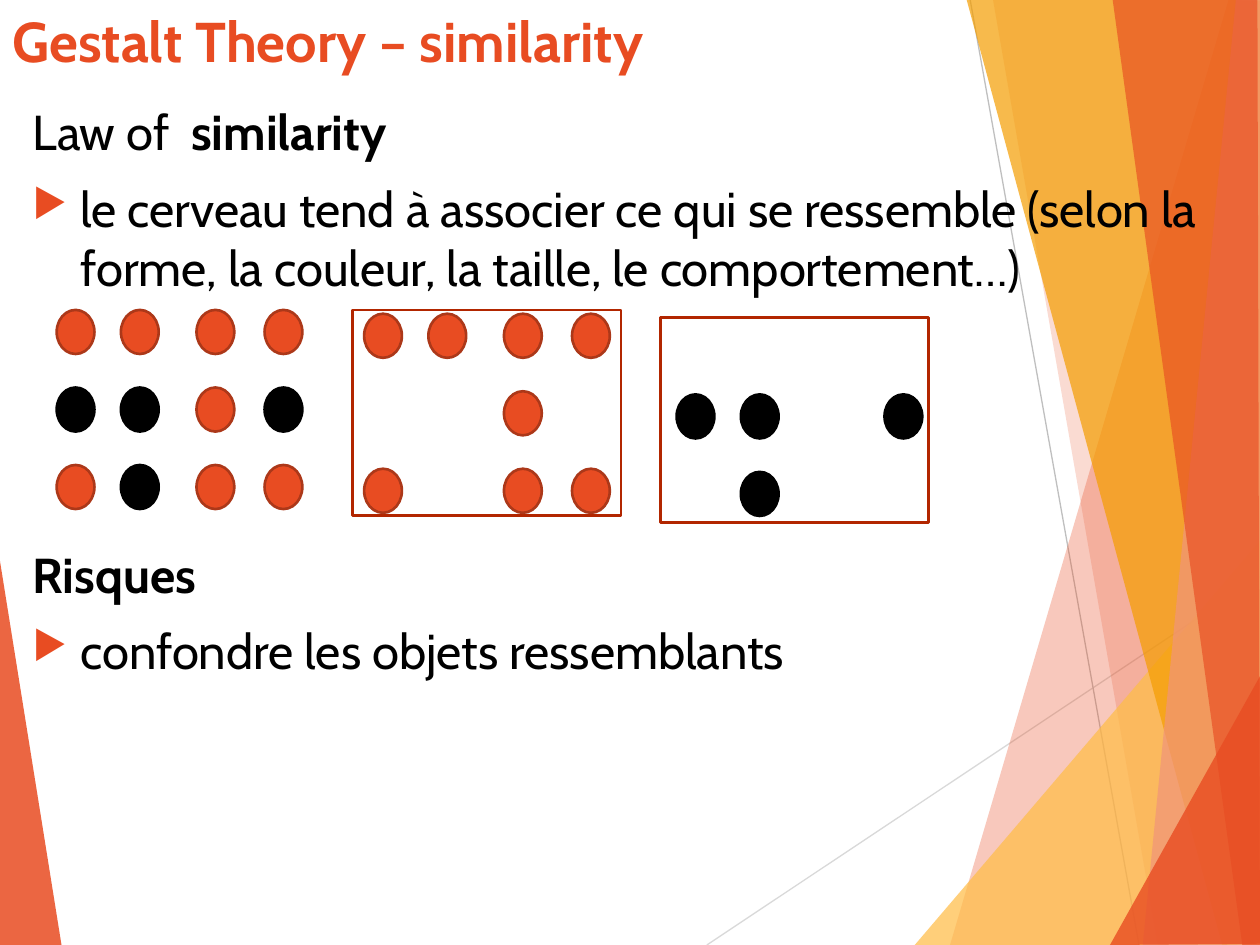
"""Build the Gestalt similarity slide."""
import dataclasses

import pptx
import pptx.dml.color
import pptx.enum.shapes
import pptx.enum.text
import pptx.oxml
import pptx.oxml.ns
import pptx.util
from lxml import etree

Inches = pptx.util.Inches
Pt = pptx.util.Pt
SHAPE = pptx.enum.shapes.MSO_SHAPE


@dataclasses.dataclass(frozen=True)
class Theme:
    """Colours, font and sizes of the slide."""
    font: str = "Cabin"
    title_size: int = 32
    body_size: int = 28
    line_width: float = 1.5
    hairline: float = 0.75
    accent: str = "E84C22"
    accent_edge: str = "AC3819"
    frame: str = "B22600"
    black: str = "000000"
    white: str = "FFFFFF"
    amber: str = "FFBD47"
    orange: str = "F49D00"
    salmon: str = "F1947A"
    light_grey: str = "D9D9D9"
    grey: str = "BFBFBF"


T = Theme()
COLUMNS = (0, 0.51, 1.11, 1.65)
ROW_STEP = 0.615

LEFT_FACET = (T.accent, 85, [(-0.01, 4.39), (0.49, 7.51), (-0.01, 7.5)])
RIGHT_FACETS = [
    (T.accent, 30, [(9.75, 0), (7.54, 7.5), (10.02, 7.51), (10.01, 0.01)]),
    (T.accent, 20, [(7.88, -0.01), (9.19, 7.5), (10.01, 7.5), (10.01, -0.01)]),
    (T.amber, 72, [(7.26, 7.5), (10, 4.29), (10.01, 7.5)]),
    (T.orange, 70, [(7.67, -0.01), (9.7, 7.5), (10.01, 7.49), (10.01, -0.01)]),
    (T.salmon, 70, [(9.81, -0.01), (9.07, 7.5), (10.01, 7.5), (10, -0.01)]),
    (T.accent, 65, [(8.83, -0.01), (9.86, 7.5), (10, 7.5), (9.98, -0.01)]),
    (T.accent, 80, [(8.81, 7.5), (10.01, 5.35), (10.01, 7.49)]),
]
DOT_GROUPS = [
    (0.45, 2.46, ("oooo", "xxox", "oxoo")),
    (2.89, 2.49, ("oooo", "  o ", "o oo")),
    (5.37, 2.515, ("    ", "xx x", " x  ")),
]
BODY = [
    (10, False, [("Law of  ", False), ("similarity", True)]),
    (10, True, [("le cerveau tend à associer ce qui se ressemble (selon la "
                 "forme, la couleur, la taille, le comportement…)", False)]),
    (142, False, [("Risques", True)]),
    (10, True, [("confondre les objets ressemblants", False)]),
]


def rgb(value):
    """Return a colour object for a hex value."""
    return pptx.dml.color.RGBColor.from_string(value)


def add_facet(s, color, alpha, points):
    """Add a translucent polygon."""
    pts = [(Inches(x), Inches(y)) for x, y in points]
    fb = s.shapes.build_freeform(*pts[0])
    fb.add_line_segments(pts[1:], close=True)
    sp = fb.convert_to_shape()
    sp.shadow.inherit = False
    sp.fill.solid()
    sp.fill.fore_color.rgb = rgb(color)
    sp.line.fill.background()
    clr = sp._element.spPr.find(".//" + pptx.oxml.ns.qn("a:srgbClr"))
    etree.SubElement(clr, pptx.oxml.ns.qn("a:alpha"), val=str(alpha * 1000))


def add_hairline(s, x1, y1, x2, y2, color):
    """Add a thin straight line."""
    ln = s.shapes.add_connector(
        pptx.enum.shapes.MSO_CONNECTOR.STRAIGHT,
        Inches(x1), Inches(y1), Inches(x2), Inches(y2))
    ln.line.color.rgb = rgb(color)
    ln.line.width = Pt(T.hairline)
    etree.SubElement(ln._element.spPr, pptx.oxml.ns.qn("a:effectLst"))


def add_outlined(s, kind, x, y, w, h, fill, edge):
    """Add a filled and outlined preset shape."""
    sp = s.shapes.add_shape(kind, Inches(x), Inches(y), Inches(w), Inches(h))
    sp.shadow.inherit = False
    sp.fill.solid()
    sp.fill.fore_color.rgb = rgb(fill)
    sp.line.color.rgb = rgb(edge)
    sp.line.width = Pt(T.line_width)


def add_dots(s, left, top, rows):
    """Add a grid of dots, o for accent and x for black."""
    styles = {"o": (T.accent, T.accent_edge), "x": (T.black, T.black)}
    for i, row in enumerate(rows):
        for x, mark in zip(COLUMNS, row):
            if mark in styles:
                add_outlined(s, SHAPE.OVAL, left + x, top + i * ROW_STEP,
                             0.3, 0.35, *styles[mark])


def add_text_frame(s, x, y, w, h):
    """Add a wrapping text box and return its text frame."""
    tf = s.shapes.add_textbox(Inches(x), Inches(y), Inches(w), Inches(h)).text_frame
    tf.word_wrap = True
    tf.vertical_anchor = pptx.enum.text.MSO_ANCHOR.TOP
    return tf


def add_run(p, text, size, color, bold):
    """Add a formatted run."""
    r = p.add_run()
    r.text = text
    r.font.name = T.font
    r.font.size = Pt(size)
    r.font.bold = bold
    r.font.color.rgb = rgb(color)


def add_bullet(p):
    """Give a paragraph a hanging triangle bullet."""
    pPr = p._p.get_or_add_pPr()
    pPr.set("marL", str(Inches(0.38)))
    pPr.set("indent", str(Inches(-0.38)))
    ns = pptx.oxml.ns.nsdecls("a")
    for xml in (f'<a:buClr {ns}><a:srgbClr val="{T.accent}"/></a:buClr>',
                f'<a:buSzPct {ns} val="80000"/>',
                f'<a:buChar {ns} char="▶"/>'):
        pPr.append(pptx.oxml.parse_xml(xml))


def add_body(s):
    """Add the body paragraphs."""
    tf = add_text_frame(s, 0.16, 0.76, 9.65, 6.38)
    for i, (before, bulleted, runs) in enumerate(BODY):
        p = tf.add_paragraph() if i else tf.paragraphs[0]
        p.space_before = Pt(before)
        if bulleted:
            add_bullet(p)
        for text, bold in runs:
            add_run(p, text, T.body_size, T.black, bold)


def main():
    """Build and save the slide."""
    prs = pptx.Presentation()
    prs.slide_width, prs.slide_height = Inches(10), Inches(7.5)
    s = prs.slides.add_slide(prs.slide_layouts[6])
    add_facet(s, *LEFT_FACET)
    add_hairline(s, 5.61, 7.5, 10.01, 4.57, T.light_grey)
    add_hairline(s, 7.7, 0, 9.04, 7.5, T.grey)
    for facet in RIGHT_FACETS:
        add_facet(s, *facet)
    for x, y in ((5.24, 2.52), (2.8, 2.46)):
        add_outlined(s, SHAPE.RECTANGLE, x, y, 2.13, 1.63, T.white, T.frame)
    tf = add_text_frame(s, 0, 0, 10, 0.95)
    add_run(tf.paragraphs[0], "Gestalt Theory – similarity", T.title_size, T.accent, True)
    add_body(s)
    for group in DOT_GROUPS:
        add_dots(s, *group)
    prs.save("out.pptx")


if __name__ == "__main__":
    main()
